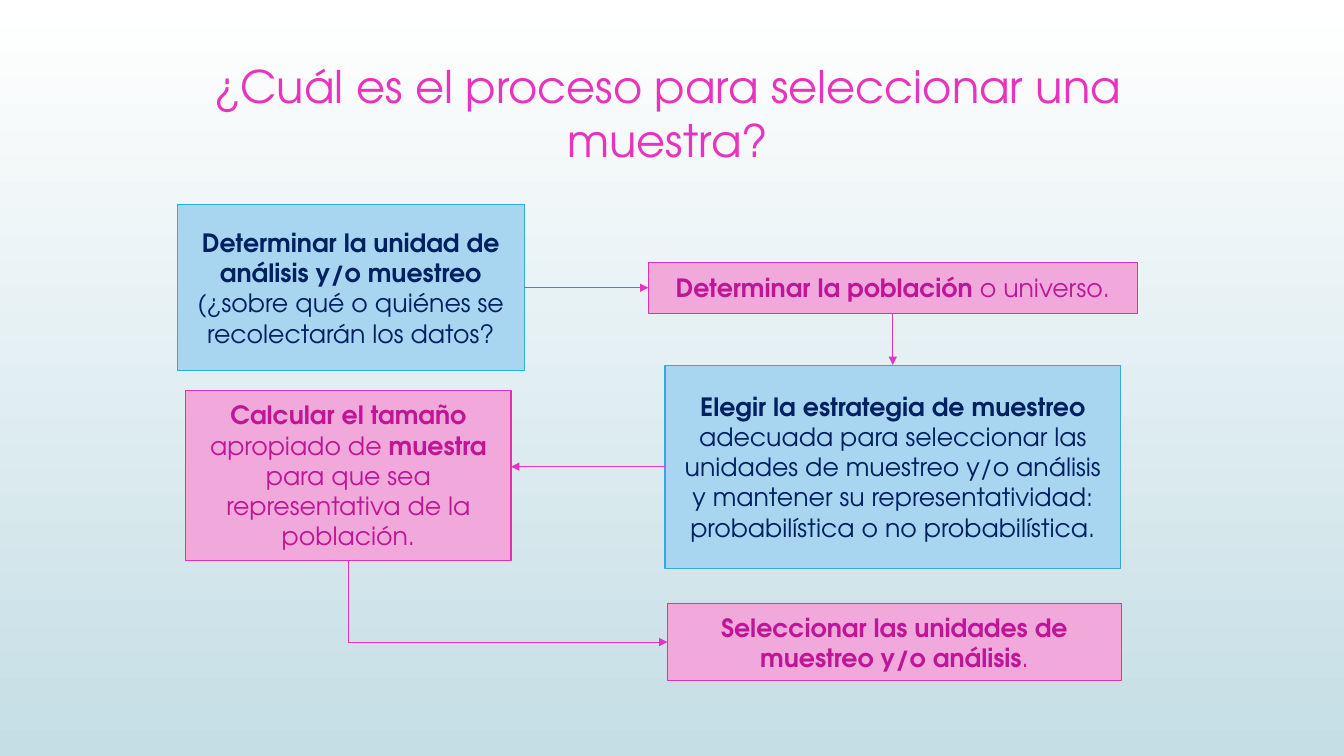
from dataclasses import dataclass

from pptx import Presentation
from pptx.dml.color import RGBColor
from pptx.enum import shapes, text
from pptx.oxml import ns, xmlchemy
from pptx.util import Cm, Pt

TOP, LEFT, BOTTOM, RIGHT = 0, 1, 2, 3


@dataclass(frozen=True)
class Theme:
    font: str = "TeX Gyre Adventor"
    head: int = 32
    body: int = 18
    rule: float = 0.75
    pink: str = "E833BF"
    sky: tuple = ("FFFFFF", "C5DEE5")
    # Box styles: fill, line, text
    blue: tuple = ("A8D5F0", "2FACDC", "002060")
    rose: tuple = ("F1A8DB", "DE31B6", "BF1698")


THEME = Theme()


def color(code):
    return RGBColor.from_string(code)


def write(shape, runs, size, ink):
    """Fill a shape with one centred paragraph of (text, bold) runs."""
    frame = shape.text_frame
    frame.word_wrap = True
    frame.vertical_anchor = text.MSO_ANCHOR.MIDDLE
    para = frame.paragraphs[0]
    para.alignment = text.PP_ALIGN.CENTER
    para.font.name = THEME.font
    para.font.size = Pt(size)
    para.font.color.rgb = color(ink)
    for words, bold in runs:
        run = para.add_run()
        run.text = words
        run.font.bold = bold


def add_title(slide, words):
    box = slide.shapes.add_textbox(Cm(4.45), Cm(1.32), Cm(24.77), Cm(3.02))
    write(box, [(words, False)], THEME.head, THEME.pink)


def add_box(slide, area, style, *runs):
    fill, line, ink = style
    box = slide.shapes.add_shape(shapes.MSO_SHAPE.RECTANGLE, *map(Cm, area))
    box.shadow.inherit = False
    box.fill.solid()
    box.fill.fore_color.rgb = color(fill)
    box.line.color.rgb = color(line)
    box.line.width = Pt(THEME.rule)
    write(box, runs, THEME.body, ink)
    return box


def add_arrow(slide, start, side, end, goal=None, kind=shapes.MSO_CONNECTOR.STRAIGHT):
    """Join a side of start to a side of end, or to a free point."""
    x, y = (0, 0) if goal is not None else end
    arrow = slide.shapes.add_connector(kind, 0, 0, x, y)
    arrow.begin_connect(start, side)
    if goal is not None:
        arrow.end_connect(end, goal)
    arrow.line.color.rgb = color(THEME.pink)
    arrow.line.width = Pt(THEME.rule)
    tail = xmlchemy.OxmlElement("a:tailEnd")
    tail.set("type", "triangle")
    arrow.line._get_or_add_ln().append(tail)
    arrow._element.spPr.append(xmlchemy.OxmlElement("a:effectLst"))
    return arrow


def add_bend(slide, start, end):
    """Go down from start, then right into end, with a single corner."""
    arrow = add_arrow(slide, start, BOTTOM, end, LEFT, shapes.MSO_CONNECTOR.ELBOW)
    left, top, wide, high = arrow.left, arrow.top, arrow.width, arrow.height
    # The frame is stored before its quarter turn, about the same centre
    arrow.left = left + (wide - high) // 2
    arrow.top = top + (high - wide) // 2
    arrow.width, arrow.height = high, wide
    props = arrow._element.spPr
    frame = props.find(ns.qn("a:xfrm"))
    frame.set("rot", str(270 * 60000))
    frame.set("flipH", "1")
    props.find(ns.qn("a:prstGeom")).set("prst", "bentConnector2")


def main():
    deck = Presentation()
    deck.slide_width, deck.slide_height = Cm(33.87), Cm(19.05)
    slide = deck.slides.add_slide(deck.slide_layouts[6])

    # Background, from top to bottom
    fill = slide.background.fill
    fill.gradient()
    fill.gradient_angle = 270
    for stop, code, place in zip(fill.gradient_stops, THEME.sky, (0, 1)):
        stop.color.rgb = color(code)
        stop.position = place

    add_title(slide, "¿Cuál es el proceso para seleccionar una muestra?")

    # Steps
    unit = add_box(
        slide, (4.47, 5.15, 8.74, 4.2), THEME.blue,
        ("Determinar la unidad de análisis y/o muestreo", True),
        (" (¿sobre qué o quiénes se recolectarán los datos?", False))
    people = add_box(
        slide, (16.34, 6.61, 12.32, 1.28), THEME.rose,
        ("Determinar la población ", True), ("o universo.", False))
    plan = add_box(
        slide, (16.76, 9.2, 11.48, 5.12), THEME.blue,
        ("Elegir la estrategia de muestreo ", True),
        ("adecuada para seleccionar las unidades de muestreo y/o análisis y "
         "mantener su representatividad: probabilística o no probabilística.", False))
    sample = add_box(
        slide, (4.68, 9.83, 8.2, 4.29), THEME.rose,
        ("Calcular el tamaño ", True), ("apropiado de ", False), ("muestra ", True),
        ("para que sea representativa de la población.", False))
    choice = add_box(
        slide, (16.82, 15.21, 11.44, 1.94), THEME.rose,
        ("Seleccionar las unidades de muestreo y/o análisis", True), (".", False))

    # Arrows between steps
    add_arrow(slide, unit, RIGHT, people, LEFT)
    add_arrow(slide, people, BOTTOM, plan, TOP)
    level = plan.top + plan.height // 2
    add_arrow(slide, plan, LEFT, (sample.left + sample.width, level))
    add_bend(slide, sample, choice)

    deck.save("out.pptx")


if __name__ == "__main__":
    main()
